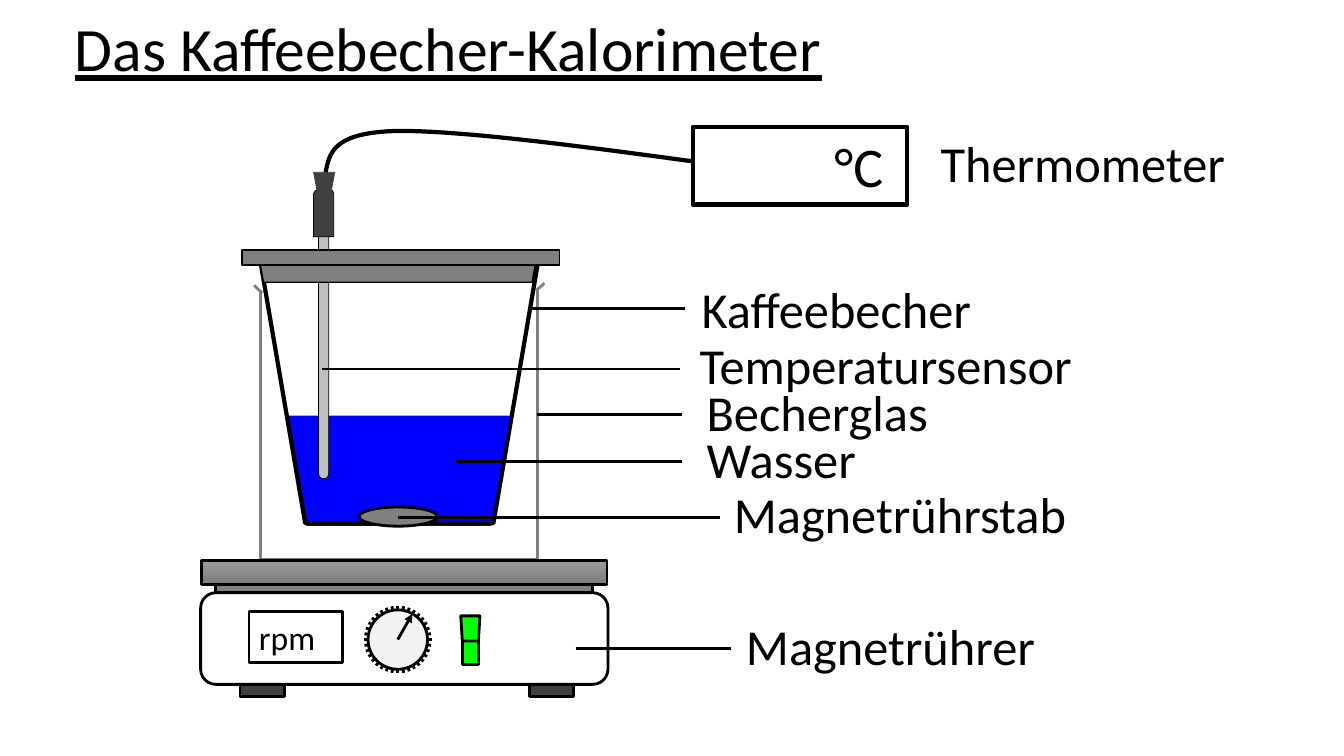
import math
from lxml import etree
from pptx import Presentation
from pptx import util as u
from pptx.dml.color import RGBColor
from pptx.enum import shapes, text
from pptx.oxml import ns

BLACK = RGBColor(0x00, 0x00, 0x00)
WHITE = RGBColor(0xFF, 0xFF, 0xFF)
GRAY = RGBColor(0x80, 0x80, 0x80)
DARK = RGBColor(0x40, 0x40, 0x40)
SILVER = RGBColor(0xBF, 0xBF, 0xBF)
PALE = RGBColor(0xF2, 0xF2, 0xF2)
BLUE = RGBColor(0x00, 0x00, 0xFF)
GREEN = RGBColor(0x00, 0xFF, 0x00)
PLATE_TOP = RGBColor(0x9D, 0x9D, 0x9D)
PLATE_BOTTOM = RGBColor(0x7C, 0x7C, 0x7C)

LINE = shapes.MSO_CONNECTOR.STRAIGHT
RECT = shapes.MSO_SHAPE.RECTANGLE
ROUND = shapes.MSO_SHAPE.ROUNDED_RECTANGLE
ROUND_TOP = shapes.MSO_SHAPE.ROUND_2_SAME_RECTANGLE
OVAL = shapes.MSO_SHAPE.OVAL
TRAPEZOID = shapes.MSO_SHAPE.TRAPEZOID

prs = Presentation()
prs.slide_width = u.Inches(13.33)
prs.slide_height = u.Inches(7.5)
slide = prs.slides.add_slide(prs.slide_layouts[5])


def draw(kind, *at, fill=None, line=BLACK, width=2, rot=0, adj=()):
    if kind is None:
        points = [(u.Inches(x), u.Inches(y)) for x, y in at]
        builder = slide.shapes.build_freeform(*points[0], scale=1.0)
        builder.add_line_segments(points[1:], close=fill is not None)
        sp = builder.convert_to_shape()
    elif kind is LINE:
        sp = slide.shapes.add_connector(kind, *map(u.Inches, at))
    else:
        sp = slide.shapes.add_shape(kind, *map(u.Inches, at))
        sp.rotation = rot
        for i, value in enumerate(adj):
            sp.adjustments[i] = value
    if fill is not None:
        sp.fill.solid()
        sp.fill.fore_color.rgb = fill
    elif kind is not LINE:
        sp.fill.background()
    sp.line.color.rgb = line
    sp.line.width = u.Pt(width)
    etree.SubElement(sp.element.spPr, ns.qn("a:effectLst"))
    return sp


def write(tf, words, size=36, align=text.PP_ALIGN.LEFT,
          anchor=text.MSO_ANCHOR.TOP, underline=None):
    tf.word_wrap = True
    tf.auto_size = text.MSO_AUTO_SIZE.NONE
    tf.vertical_anchor = anchor
    p = tf.paragraphs[0]
    p.alignment = align
    r = p.add_run()
    r.text = words
    r.font.name = "Calibri"
    r.font.size = u.Pt(size)
    r.font.color.rgb = BLACK
    r.font.underline = underline
    return p


title = slide.shapes.title
title.left, title.top = u.Inches(0.64), u.Inches(-0.21)
title.width, title.height = u.Inches(11.5), u.Inches(1.45)
p = write(title.text_frame, "Das Kaffeebecher-Kalorimeter", size=44,
          anchor=text.MSO_ANCHOR.MIDDLE, underline=True)
p.line_spacing = 0.9

for ends in [(2.58, 2.88, 2.58, 5.55), (5.33, 2.88, 5.33, 5.55),
             (5.33, 5.55, 2.58, 5.55), (2.52, 2.83, 2.6, 2.91),
             (5.4, 2.81, 5.32, 2.88)]:
    draw(LINE, *ends, line=GRAY)
draw(TRAPEZOID, 2.86, 4.13, 2.19, 1.08, fill=BLUE, line=BLUE, width=1,
     rot=180, adj=[0.171])

draw(RECT, 2.14, 5.8, 3.74, 0.08, fill=GRAY)
for foot_x in (2.38, 5.25):
    draw(RECT, foot_x, 6.79, 0.44, 0.12, fill=DARK)
draw(ROUND, 1.99, 5.88, 4.04, 0.91, fill=WHITE)
plate = draw(RECT, 2, 5.56, 4.02, 0.24)
plate.fill.gradient()
plate.fill.gradient_angle = 270
for stop, color in zip(plate.fill.gradient_stops, (PLATE_TOP, PLATE_BOTTOM)):
    stop.color.rgb = color
draw(RECT, 4.59, 6.12, 0.16, 0.47, fill=GREEN)
draw(TRAPEZOID, 4.57, 6.11, 0.19, 0.25, fill=GREEN, rot=180, adj=[0.079])

knob_x, knob_y, knob_r, tooth_r = 3.945, 6.345, 0.295, 0.335
for degrees in range(0, 180, 10):
    dx = tooth_r * math.cos(math.radians(degrees))
    dy = tooth_r * math.sin(math.radians(degrees))
    draw(LINE, knob_x + dx, knob_y + dy, knob_x - dx, knob_y - dy)
draw(OVAL, knob_x - knob_r, knob_y - knob_r, 2 * knob_r, 2 * knob_r, fill=PALE)
pointer = draw(LINE, knob_x, knob_y, 4.09, 6.09)
ln = pointer.element.spPr.find(ns.qn("a:ln"))
etree.SubElement(ln, ns.qn("a:tailEnd"), type="triangle")
display = draw(RECT, 2.47, 6.07, 0.93, 0.5)
write(display.text_frame, "rpm", size=24)

draw(TRAPEZOID, 2.57, 2.52, 2.78, 2.67, width=3, rot=180, adj=[0.171])
draw(OVAL, 3.56, 5.03, 0.78, 0.19, fill=GRAY)

draw(None, (3.13, 1.89), (3.3, 1.89), (3.31, 1.92), (3.31, 2.35),
     (3.11, 2.35), (3.11, 1.92), fill=DARK, width=0.5)
draw(ROUND_TOP, 3.16, 2.35, 0.1, 2.4, fill=SILVER, width=0.5, rot=180, adj=[0.5, 0])
draw(TRAPEZOID, 3.11, 1.71, 0.21, 0.2, fill=DARK, line=DARK, width=0.5,
     rot=180, adj=[0.186])
thermometer = draw(RECT, 6.87, 1.26, 2.13, 0.77, width=3)
thermometer.text_frame.margin_right = u.Inches(0.24)
write(thermometer.text_frame, "°C", size=40, align=text.PP_ALIGN.RIGHT)

cable = [(3.23, 1.71)]
for curve in [((3.23, 1.71), (3.27, 1.51), (3.31, 1.32), (3.92, 1.3)),
              ((3.92, 1.3), (4.52, 1.29), (5.69, 1.44), (6.86, 1.6))]:
    for step in range(1, 25):
        t = step / 24
        weights = [math.comb(3, i) * t**i * (1 - t)**(3 - i) for i in range(4)]
        cable.append([sum(w * c for w, c in zip(weights, axis))
                      for axis in zip(*curve)])
draw(None, *cable, width=3)

draw(TRAPEZOID, 2.57, 2.56, 2.75, 0.24, fill=GRAY, width=1, rot=180, adj=[0.179])
draw(RECT, 2.4, 2.48, 3.15, 0.15, fill=GRAY, width=1)

for name, x, y, leader in [
    ("Thermometer", 9.23, 1.26, None),
    ("Kaffeebecher", 6.86, 2.71, (5.25, 6.79, 3.06)),
    ("Temperatursensor", 6.84, 3.27, (3.19, 6.74, 3.66)),
    ("Magnetrührstab", 7.18, 4.74, (3.95, 7.14, 5.13)),
    ("Magnetrührer", 7.3, 6.05, (5.71, 7.25, 6.43)),
    ("Wasser", 6.91, 4.2, (4.52, 6.76, 4.58)),
    ("Becherglas", 6.91, 3.73, (5.33, 6.76, 4.11)),
]:
    label = slide.shapes.add_textbox(*map(u.Inches, (x, y, 3.95, 0.71)))
    write(label.text_frame, name)
    if leader:
        start, end, level = leader
        draw(LINE, start, level, end, level)

prs.save("out.pptx")
